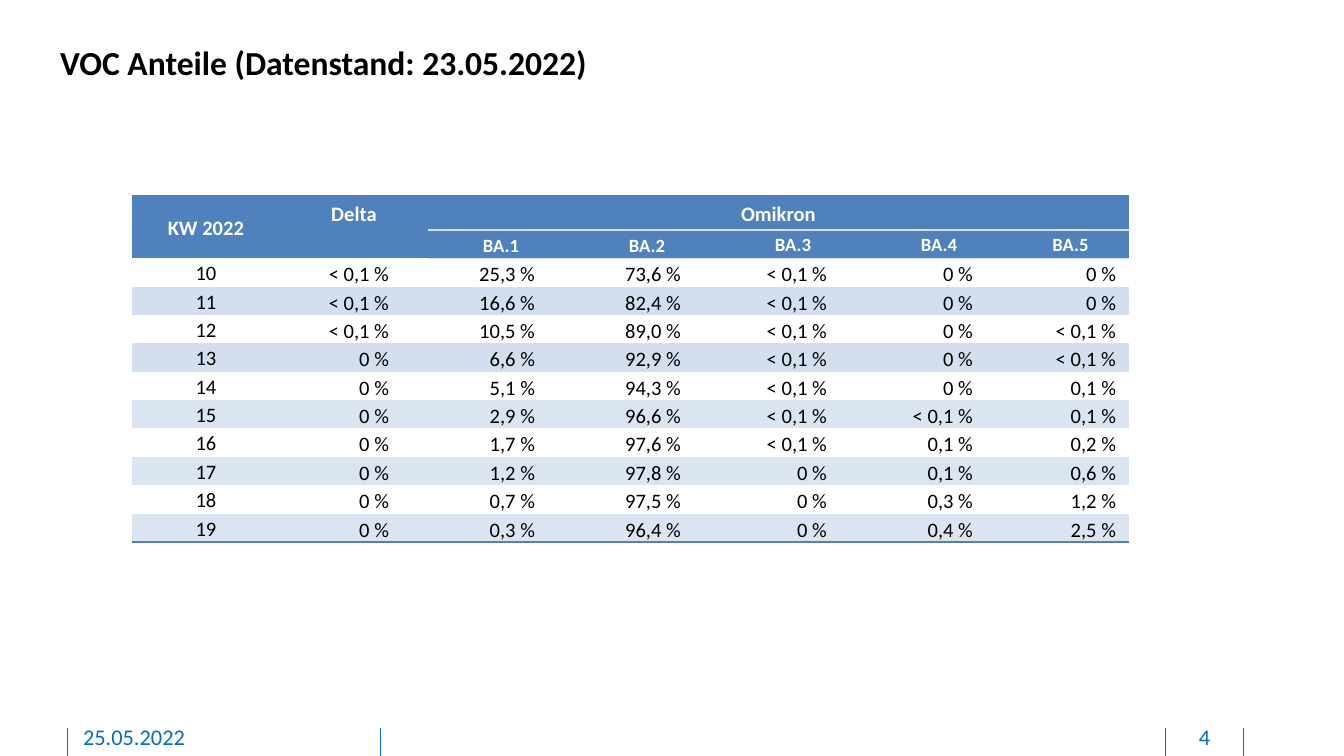
"""Build the slide with the weekly table of virus variant shares."""
from lxml.etree import SubElement
from pptx import Presentation
from pptx.dml.color import RGBColor
from pptx.enum.shapes import MSO_CONNECTOR
from pptx.enum.text import MSO_ANCHOR, MSO_AUTO_SIZE, PP_ALIGN
from pptx.oxml.ns import qn
from pptx.util import Emu, Pt

BLUE, HEADER_BLUE, HEADER_LINE = "006EC7", "4F81BD", "D9E2F3"
NO_GRID_STYLE = "{2D5ABB26-0587-4C30-8999-92F81FD0307C}"
HEADER_ROWS = [
    ["KW 2022", "Delta", "Omikron", "", "", "", ""],
    ["", "", "BA.1", "BA.2", "BA.3", "BA.4", "BA.5"],
]
DATA_ROWS = [
    ["10", "< 0,1 %", "25,3 %", "73,6 %", "< 0,1 %", "0 %", "0 %"],
    ["11", "< 0,1 %", "16,6 %", "82,4 %", "< 0,1 %", "0 %", "0 %"],
    ["12", "< 0,1 %", "10,5 %", "89,0 %", "< 0,1 %", "0 %", "< 0,1 %"],
    ["13", "0 %", "6,6 %", "92,9 %", "< 0,1 %", "0 %", "< 0,1 %"],
    ["14", "0 %", "5,1 %", "94,3 %", "< 0,1 %", "0 %", "0,1 %"],
    ["15", "0 %", "2,9 %", "96,6 %", "< 0,1 %", "< 0,1 %", "0,1 %"],
    ["16", "0 %", "1,7 %", "97,6 %", "< 0,1 %", "0,1 %", "0,2 %"],
    ["17", "0 %", "1,2 %", "97,8 %", "0 %", "0,1 %", "0,6 %"],
    ["18", "0 %", "0,7 %", "97,5 %", "0 %", "0,3 %", "1,2 %"],
    ["19", "0 %", "0,3 %", "96,4 %", "0 %", "0,4 %", "2,5 %"],
]
ROWS = HEADER_ROWS + DATA_ROWS
COLUMN_WIDTHS = [148, 148, 146, 146, 146, 146, 117]
ROW_HEIGHTS = [35, 8] + [16] * len(DATA_ROWS)


def px(length):
    return Emu(round(length * 9144000 / 1344))


def color(value):
    return RGBColor.from_string(value)


presentation = Presentation()
presentation.slide_width, presentation.slide_height = px(1344), px(756)
slide = presentation.slides.add_slide(presentation.slide_layouts[6])

for x in (1165, 381, 67, 1243):
    divider = slide.shapes.add_connector(MSO_CONNECTOR.STRAIGHT, px(x), px(728), px(x), px(758))
    divider.line.color.rgb = color(BLUE)
    divider.line.width = Pt(0.5)
    SubElement(divider.element.spPr, qn("a:effectLst"))

title = slide.shapes.add_textbox(px(47), px(35), px(559), px(54))
title.text_frame.text = "VOC Anteile (Datenstand: 23.05.2022)"
title.text_frame.word_wrap = False
title.text_frame.auto_size = MSO_AUTO_SIZE.SHAPE_TO_FIT_TEXT
title_font = title.text_frame.paragraphs[0].runs[0].font
title_font.name, title_font.size, title_font.bold = "Calibri", Pt(18), True
title_font.color.rgb = color("000000")

for text, left, width, alignment in (
    ("25.05.2022", 83, 273, PP_ALIGN.LEFT),
    ("4", 1168, 73, PP_ALIGN.CENTER),
):
    footer = slide.shapes.add_textbox(px(left), px(723), px(width), px(28))
    frame = footer.text_frame
    frame.text = text
    frame.word_wrap = True
    frame.margin_left = frame.margin_right = frame.margin_top = 0
    frame.margin_bottom = px(7)
    paragraph = frame.paragraphs[0]
    paragraph.alignment = alignment
    font = paragraph.runs[0].font
    font.name, font.size = "Calibri", Pt(12)
    font.color.rgb = color(BLUE)

table_frame = slide.shapes.add_table(
    len(ROWS), len(COLUMN_WIDTHS), px(132), px(195), px(sum(COLUMN_WIDTHS)), px(329)
)
table = table_frame.table
table.horz_banding = table.first_row = False
table_frame.element.find(".//" + qn("a:tableStyleId")).text = NO_GRID_STYLE
for column, width in zip(table.columns, COLUMN_WIDTHS):
    column.width = px(width)
for row, height in zip(table.rows, ROW_HEIGHTS):
    row.height = px(height)
table_frame.height = px(329)

for row_index, values in enumerate(ROWS):
    is_header = row_index < 2
    for column_index, text in enumerate(values):
        cell = table.cell(row_index, column_index)
        cell.margin_left = cell.margin_right = px(7)
        cell.margin_top = cell.margin_bottom = 0
        top_anchored = row_index == 1 and column_index > 3
        cell.vertical_anchor = MSO_ANCHOR.TOP if top_anchored else MSO_ANCHOR.MIDDLE

        cell.text_frame.text = text
        paragraph = cell.text_frame.paragraphs[0]
        is_value = not is_header and column_index > 0
        paragraph.alignment = PP_ALIGN.RIGHT if is_value else PP_ALIGN.CENTER
        paragraph.line_spacing = 1.15 if is_header or is_value else 1.1
        if is_value:
            right_indent = px(6 if column_index == 6 else 32)
            paragraph.alignment = PP_ALIGN.RIGHT
            paragraph._p.get_or_add_pPr().set("marR", str(right_indent))
        for run in paragraph.runs:
            run.font.name = "Calibri"
            run.font.size = Pt(10 if row_index == 1 else 11)
            run.font.bold = is_header
            run.font.color.rgb = color("FFFFFF" if is_header else "000000")
        if not text:
            SubElement(paragraph._p, qn("a:endParaRPr"), sz="1000")

        borders = []
        if row_index == 0 and column_index > 1:
            borders = [("a:lnB", HEADER_LINE)]
        elif row_index == 1 and column_index > 1:
            borders = [("a:lnT", HEADER_LINE)]
        elif row_index == len(ROWS) - 1:
            borders = [("a:lnB", HEADER_BLUE)]
        for tag, line_color in borders:
            border = SubElement(cell._tc.get_or_add_tcPr(), qn(tag), w="12700")
            SubElement(SubElement(border, qn("a:solidFill")), qn("a:srgbClr"), val=line_color)

        if is_header or row_index % 2:
            cell.fill.solid()
            band = "D3DFEE" if row_index < 6 else "DBE5F1"
            cell.fill.fore_color.rgb = color(HEADER_BLUE if is_header else band)
        else:
            cell.fill.background()

table.cell(0, 0).merge(table.cell(1, 0))
table.cell(0, 2).merge(table.cell(0, 6))
presentation.save("out.pptx")
